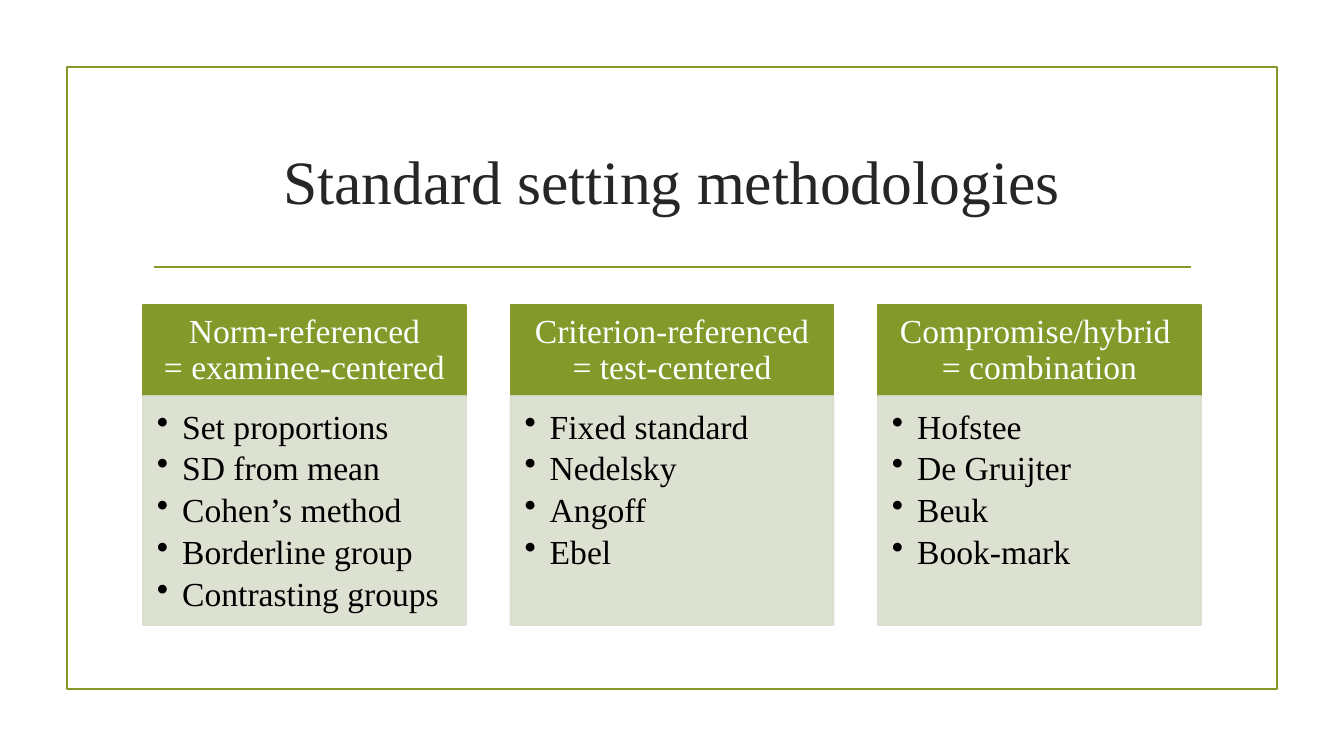
from lxml import etree
from pptx import Presentation
from pptx import util as u
from pptx.dml.color import RGBColor
from pptx.enum import shapes, text
from pptx.oxml.ns import qn

OLIVE = RGBColor(0x83, 0x99, 0x2A)
PALE = RGBColor(0xD9, 0xDE, 0xCD)
CHARCOAL = RGBColor(0x26, 0x26, 0x26)
WHITE = RGBColor(0xFF, 0xFF, 0xFF)
BLACK = RGBColor(0, 0, 0)
LINE_WIDTH = u.Pt(1.25)
EMU_PER_PX = 914400 / 100.8


def px(*lengths):
    return [u.Emu(round(length * EMU_PER_PX)) for length in lengths]


def format_text(paragraph, size, color, **spacing):
    for name, value in spacing.items():
        setattr(paragraph, name, value)
    for run in paragraph.runs:
        run.font.name = "Times New Roman"
        run.font.size = u.Pt(size)
        run.font.color.rgb = color


prs = Presentation()
prs.slide_width, prs.slide_height = px(1344, 756)
slide = prs.slides.add_slide(prs.slide_layouts[5])

# Frame around the slide
frame = slide.shapes.add_shape(shapes.MSO_SHAPE.RECTANGLE, *px(67, 67, 1210, 622))
frame.shadow.inherit = False
frame.fill.background()
frame.line.color.rgb = OLIVE
frame.line.width = LINE_WIDTH

# Title and the rule below it
title = slide.shapes.title
title.left, title.top, title.width, title.height = px(143, 108, 1058, 144)
title.text_frame.text = "Standard setting methodologies"
title.text_frame.vertical_anchor = text.MSO_ANCHOR.MIDDLE
format_text(title.text_frame.paragraphs[0], 44, CHARCOAL,
            alignment=text.PP_ALIGN.CENTER)

rule = slide.shapes.add_connector(shapes.MSO_CONNECTOR.STRAIGHT, *px(154, 267, 1191, 267))
rule.line.color.rgb = OLIVE
rule.line.width = LINE_WIDTH
etree.SubElement(rule._element.spPr, qn("a:effectLst"))

# Three method families: heading, then examples
families = [
    ("Norm-referenced\v= examinee-centered",
     ["Set proportions", "SD from mean", "Cohen’s method",
      "Borderline group", "Contrasting groups"]),
    ("Criterion-referenced\v= test-centered",
     ["Fixed standard", "Nedelsky", "Angoff", "Ebel"]),
    ("Compromise/hybrid \v= combination",
     ["Hofstee", "De Gruijter", "Beuk", "Book-mark"]),
]
LEFT, PITCH, WIDTH = 143, 367.5, 323
# top, height, fill, anchor, insets (left, top, right, bottom)
heading_format = (305, 91, OLIVE, text.MSO_ANCHOR.MIDDLE, (19, 11, 19, 11))
methods_format = (396, 229, PALE, text.MSO_ANCHOR.TOP, (14, 14, 19, 21))

for column, (heading, methods) in enumerate(families):
    panels = [(heading_format, [heading]), (methods_format, methods)]
    for (top, height, color, anchor, insets), lines in panels:
        panel = slide.shapes.add_shape(
            shapes.MSO_SHAPE.RECTANGLE, *px(LEFT + column * PITCH, top, WIDTH, height))
        panel.shadow.inherit = False
        panel.fill.solid()
        panel.fill.fore_color.rgb = color
        panel.line.color.rgb = color
        panel.line.width = LINE_WIDTH

        frame_format = dict(zip(
            ("margin_left", "margin_top", "margin_right", "margin_bottom"), px(*insets)))
        frame_format.update(vertical_anchor=anchor, word_wrap=True, text="\n".join(lines))
        for name, value in frame_format.items():
            setattr(panel.text_frame, name, value)

        if color == OLIVE:
            format_text(panel.text_frame.paragraphs[0], 24, WHITE,
                        alignment=text.PP_ALIGN.CENTER, line_spacing=0.9)
            continue

        # Pale panels: slight transparency and a bulleted list
        for rgb in panel._element.spPr.iter(qn("a:srgbClr")):
            etree.SubElement(rgb, qn("a:alpha"), val="90000")
        for method in panel.text_frame.paragraphs:
            properties = method._p.get_or_add_pPr()
            properties.set("marL", "228600")
            properties.set("indent", "-228600")
            etree.SubElement(properties, qn("a:buChar"), char="•")
            format_text(method, 24, BLACK, alignment=text.PP_ALIGN.LEFT,
                        line_spacing=0.9, space_after=u.Pt(4))

prs.save("out.pptx")
